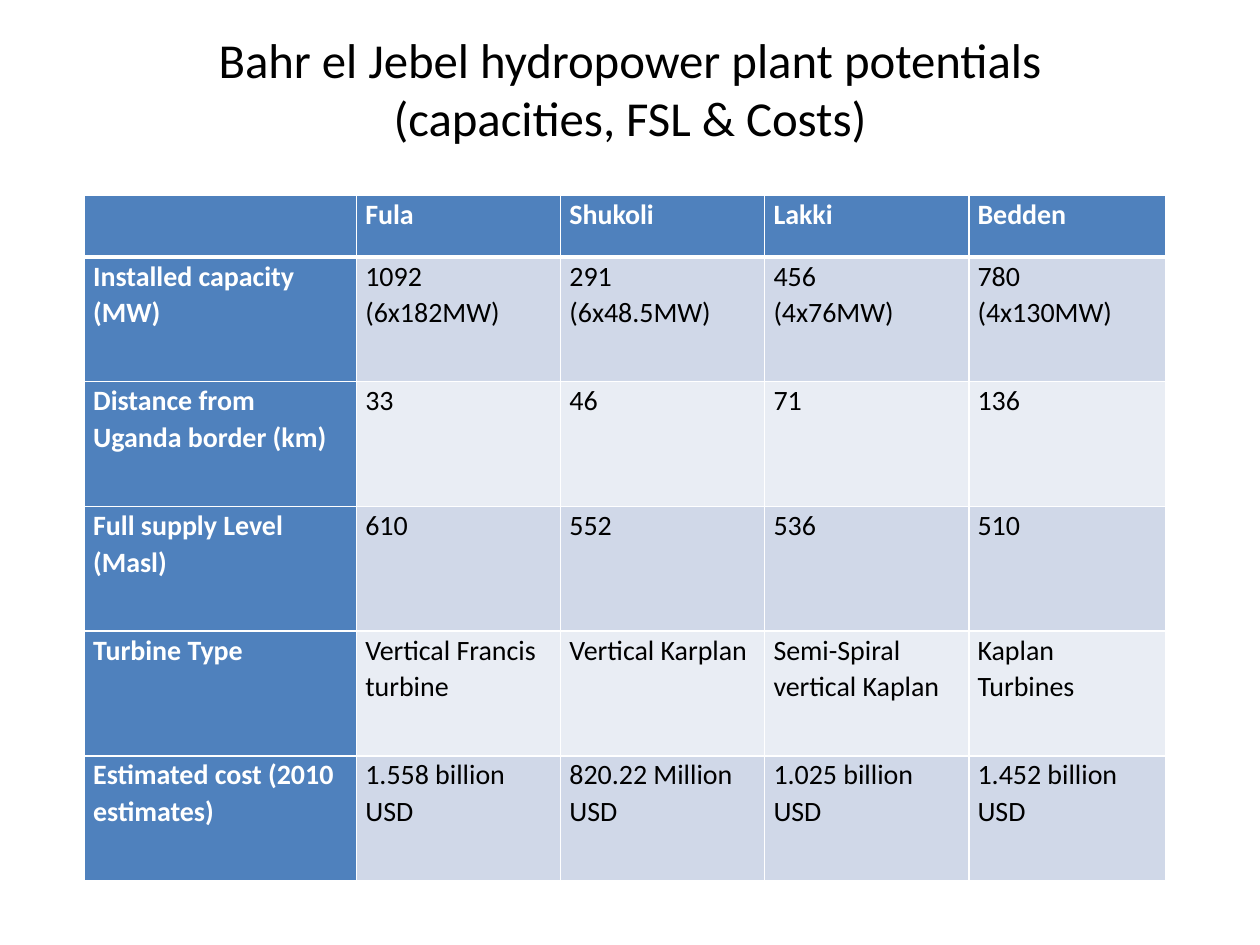
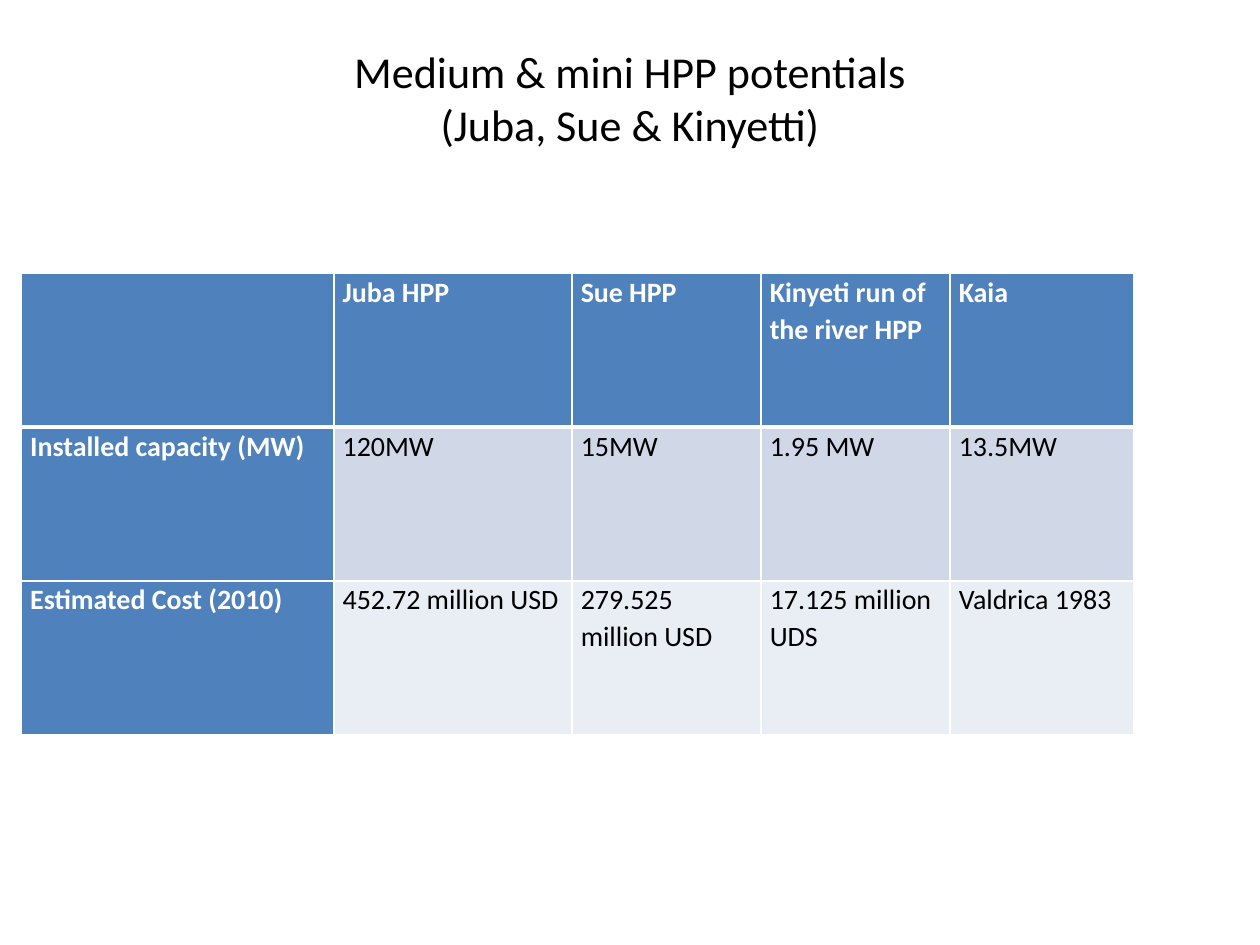
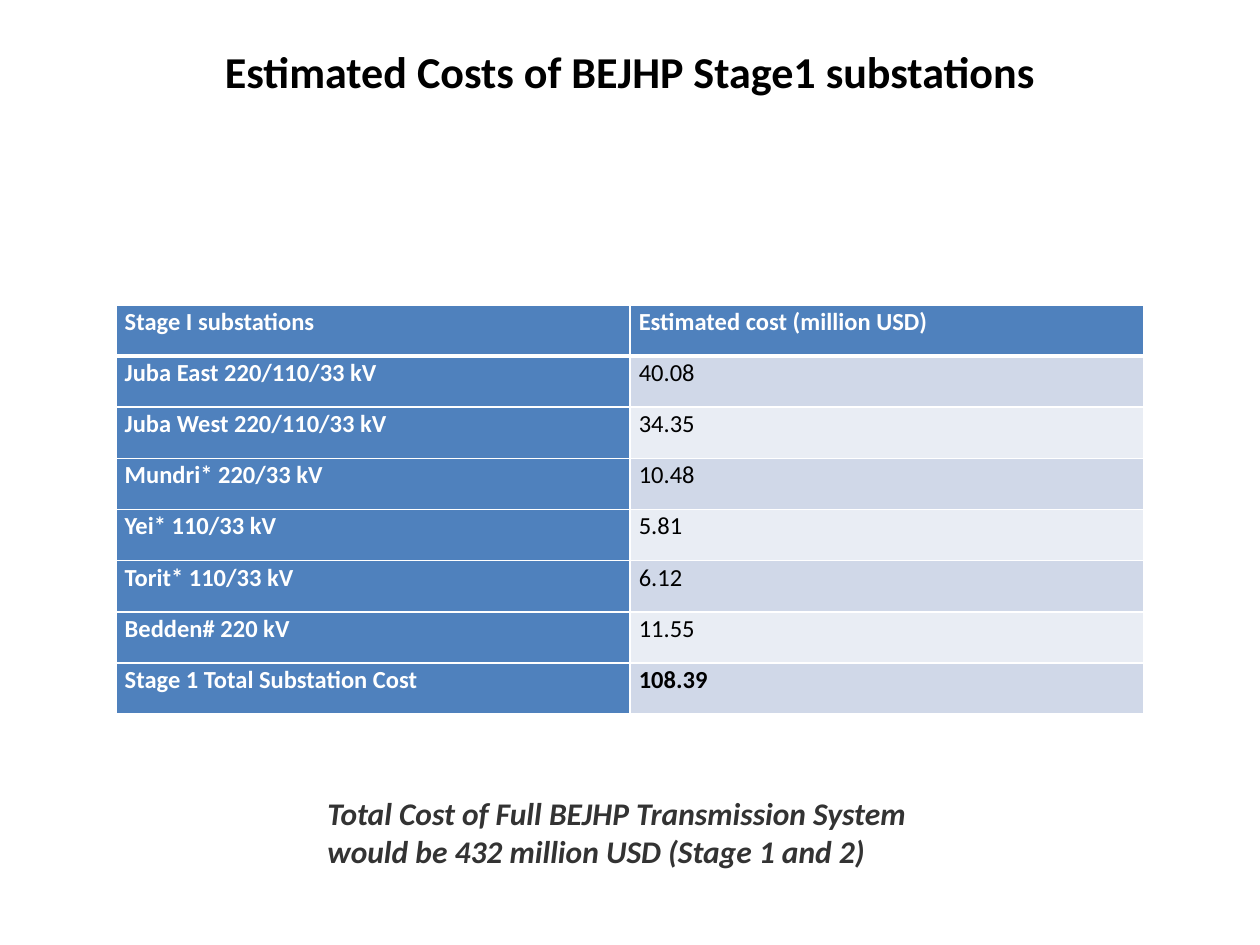
from lxml import etree
from pptx import Presentation
from pptx import util as u
from pptx.dml.color import RGBColor
from pptx.enum import text
from pptx.oxml import ns

FONT = "Calibri"
COLORS = {
    "text": "000000",
    "note": "333333",
    "header": "4F81BD",
    "band_dark": "D0D8E8",
    "band_light": "E9EDF4",
    "white": "FFFFFF",
}

# Content: "\v" breaks a line, "\n" starts a paragraph; lengths in inches
SLIDES = [
    {
        "title": "Bahr el Jebel hydropower plant potentials\v(capacities, FSL & Costs)",
        "title_height": 1.25, "title_size": 27.9, "title_bottom_inset": 0.5,
        "table_at": (0.67, 1.55), "text_size": 16,
        "columns": [2.16, 1.62, 1.62, 1.62, 1.56],
        "header_height": 0.49, "row_height": 0.99,
        "rows": [
            ["", "Fula", "Shukoli", "Lakki", "Bedden"],
            ["Installed capacity (MW)", "1092\n(6x182MW)", "291\n(6x48.5MW)",
             "456\n(4x76MW)", "780\n(4x130MW)"],
            ["Distance from Uganda border (km)", "33", "46", "71", "136"],
            ["Full supply Level (Masl)", "610", "552", "536", "510"],
            ["Turbine Type", "Vertical Francis turbine", "Vertical Karplan",
             "Semi-Spiral vertical Kaplan", "Kaplan Turbines"],
            ["Estimated cost (2010 estimates)", "1.558 billion USD",
             "820.22 Million USD", "1.025 billion USD", "1.452 billion USD"],
        ],
    },
    {
        "title": "Medium & mini HPP potentials\v(Juba, Sue & Kinyetti)",
        "title_height": 0.95, "title_size": 25.2,
        "table_at": (0.17, 2.17), "text_size": 16,
        "columns": [2.48, 1.89, 1.5, 1.5, 1.46],
        "header_height": 1.22, "row_height": 1.22,
        "rows": [
            ["", "Juba HPP", "Sue HPP", "Kinyeti run of the river HPP", "Kaia"],
            ["Installed capacity (MW)", "120MW", "15MW", "1.95 MW", "13.5MW"],
            ["Estimated Cost (2010)", "452.72 million USD", "279.525 million USD",
             "17.125 million UDS", "Valdrica 1983"],
        ],
    },
    {
        "title": "Estimated Costs of BEJHP Stage1 substations",
        "title_height": 0.53, "title_size": 25.2, "title_bold": True,
        "table_at": (0.92, 2.42), "text_size": 14,
        "columns": [4.08, 4.08],
        "header_height": 3.25 / 8, "row_height": 3.25 / 8, "bold_total": True,
        "rows": [
            ["Stage I substations", "Estimated cost (million USD)"],
            ["Juba East 220/110/33 kV", "40.08"],
            ["Juba West 220/110/33 kV", "34.35"],
            ["Mundri* 220/33 kV", "10.48"],
            ["Yei* 110/33 kV", "5.81"],
            ["Torit* 110/33 kV", "6.12"],
            ["Bedden# 220 kV", "11.55"],
            ["Stage 1 Total Substation Cost", "108.39"],
        ],
        "note": "Total Cost of Full BEJHP Transmission System "
                "would be 432 million USD (Stage 1 and 2)",
    },
]


def rgb(name):
    return RGBColor.from_string(COLORS[name])


def format_text(text_frame, size, color, bold=False, italic=False,
                align=None, line_spacing=None):
    for paragraph in text_frame.paragraphs:
        paragraph.alignment = align
        paragraph.line_spacing = line_spacing
        for run in paragraph.runs:
            font = run.font
            font.name, font.size = FONT, u.Pt(size)
            font.bold, font.italic = bold, italic
            font.color.rgb = rgb(color)


def add_text(slide, at, words):
    text_frame = slide.shapes.add_textbox(*map(u.Inches, at)).text_frame
    text_frame.word_wrap = True
    text_frame.text = words
    return text_frame


def set_borders(cell, widths):
    """Draw white lines; widths maps a side (L, R, T, B) to points."""
    properties = cell._tc.get_or_add_tcPr()
    for position, (side, width) in enumerate(widths.items()):
        line = etree.Element(ns.qn(f"a:ln{side}"), w=str(u.Pt(width)))
        fill = etree.SubElement(line, ns.qn("a:solidFill"))
        etree.SubElement(fill, ns.qn("a:srgbClr"), val=COLORS["white"])
        properties.insert(position, line)


def add_title(slide, content):
    text_frame = add_text(slide, (0.5, 0.3, 9, content["title_height"]), content["title"])
    text_frame.vertical_anchor = text.MSO_ANCHOR.MIDDLE
    text_frame.margin_bottom = u.Inches(content.get("title_bottom_inset", 0.05))
    format_text(text_frame, content["title_size"], "text",
                bold=content.get("title_bold", False), align=text.PP_ALIGN.CENTER)


def add_data_table(slide, content):
    rows, columns = content["rows"], content["columns"]
    heights = [content["header_height"]] + [content["row_height"]] * (len(rows) - 1)
    size = sum(columns), sum(heights)
    table = slide.shapes.add_table(
        len(rows), len(columns), *map(u.Inches, content["table_at"] + size)).table
    table.first_col = True
    for column, width in zip(table.columns, columns):
        column.width = u.Inches(width)
    for row, height in zip(table.rows, heights):
        row.height = u.Inches(height)

    for r, values in enumerate(rows):
        is_total = content.get("bold_total", False) and r == len(rows) - 1
        for c, value in enumerate(values):
            cell = table.cell(r, c)
            is_heading = r == 0 or c == 0
            band = "band_dark" if r % 2 else "band_light"
            cell.text_frame.text = value
            cell.margin_left = cell.margin_right = u.Inches(0.07)
            cell.margin_top = cell.margin_bottom = 0
            cell.fill.solid()
            cell.fill.fore_color.rgb = rgb("header" if is_heading else band)
            format_text(cell.text_frame, content["text_size"],
                        "white" if is_heading else "text",
                        bold=is_heading or is_total, line_spacing=1.07)
            set_borders(cell, {"L": 1, "R": 1, "T": 3 if r == 1 else 1,
                               "B": 3 if r == 0 else 1})


presentation = Presentation()
presentation.slide_width, presentation.slide_height = u.Inches(10), u.Inches(7.5)

for content in SLIDES:
    slide = presentation.slides.add_slide(presentation.slide_layouts[6])
    add_title(slide, content)
    add_data_table(slide, content)
    if "note" in content:
        note = add_text(slide, (2.5, 6.25, 5, 0.71), content["note"])
        format_text(note, 18, "note", bold=True, italic=True)

presentation.save("out.pptx")
